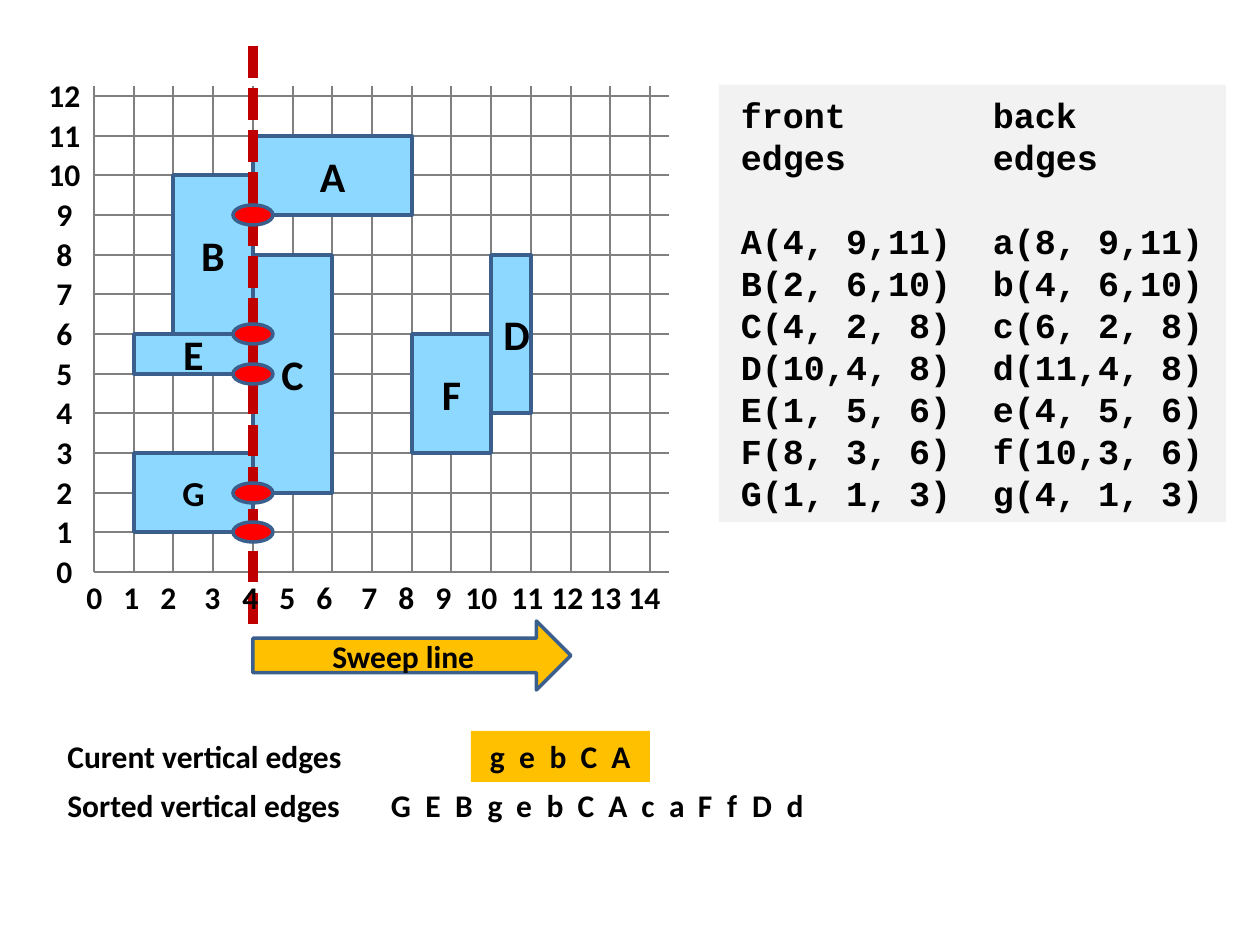
import pptx
import pptx.util
from pptx.dml.color import RGBColor
from pptx.enum.dml import MSO_LINE
from pptx.enum.shapes import MSO_CONNECTOR, MSO_SHAPE
from pptx.enum.text import MSO_ANCHOR, PP_ALIGN
from lxml import etree

PX = 914400 // 126
BLACK = RGBColor(0x00, 0x00, 0x00)
GRID_GRAY = RGBColor(0x80, 0x80, 0x80)
PANEL_GRAY = RGBColor(0xF2, 0xF2, 0xF2)
SKY = RGBColor(0x8C, 0xD8, 0xFE)
BLUE = RGBColor(0x3A, 0x5F, 0x8C)
RED = RGBColor(0xFF, 0x00, 0x00)
DARK_RED = RGBColor(0xC0, 0x00, 0x00)
AMBER = RGBColor(0xFF, 0xC0, 0x00)

COLUMNS, ROWS = 14, 12
column_x = [94 + round(i * 556 / COLUMNS) for i in range(COLUMNS + 1)]
row_y = [572 - round(i * 476 / ROWS) for i in range(ROWS + 1)]
GRID_TOP, GRID_RIGHT = 86, 669
SWEEP = 4

# name: (front x, back x, low y, high y)
boxes = {
    "G": (1, 4, 1, 3),
    "E": (1, 4, 5, 6),
    "B": (2, 4, 6, 10),
    "A": (4, 8, 9, 11),
    "C": (4, 6, 2, 8),
    "F": (8, 10, 3, 6),
    "D": (10, 11, 4, 8),
}

presentation = pptx.Presentation()
presentation.slide_width = 1260 * PX
presentation.slide_height = 945 * PX
slide = presentation.slides.add_slide(presentation.slide_layouts[6])


def add_box(kind, left, top, width, height, fill=None, outline=None):
    """Adds a preset shape, or a text box when kind is None."""
    place = [value * PX for value in (left, top, width, height)]
    if kind is None:
        shape = slide.shapes.add_textbox(*place)
    else:
        shape = slide.shapes.add_shape(kind, *place)
        shape.shadow.inherit = False
        shape.fill.solid()
        shape.fill.fore_color.rgb = fill
        if outline is None:
            shape.line.fill.background()
        else:
            shape.line.color.rgb = outline
            shape.line.width = pptx.util.Pt(2)
    shape.text_frame.word_wrap = True
    return shape


def write(shape, text, size=18, font="Calibri", align=PP_ALIGN.LEFT,
          anchor=MSO_ANCHOR.TOP, inset=None, stops=(), stop_kind="ctr"):
    """Sets bold text; inset is (side, end) and stops are tab stops, in px."""
    frame = shape.text_frame
    frame.text = text
    frame.vertical_anchor = anchor
    if inset:
        frame.margin_left = frame.margin_right = inset[0] * PX
        frame.margin_top = frame.margin_bottom = inset[1] * PX
    for paragraph in frame.paragraphs:
        paragraph.alignment = align
        if stops:
            properties = paragraph._p.get_or_add_pPr()
            tabs = etree.SubElement(properties, pptx.oxml.ns.qn("a:tabLst"))
            for stop in stops:
                etree.SubElement(tabs, pptx.oxml.ns.qn("a:tab"),
                                 pos=str(stop * PX), algn=stop_kind)
        for run in paragraph.runs:
            run.font.size = pptx.util.Pt(size)
            run.font.name = font
            run.font.bold = True
            run.font.color.rgb = BLACK


# Grid lines, then the boxes, then the sweep line over them
grid_lines = [(x, GRID_TOP, x, row_y[0]) for x in column_x]
grid_lines += [(GRID_RIGHT, y, column_x[0], y) for y in row_y]
sweep_line = (column_x[SWEEP], 46, column_x[SWEEP], 631)

for ends in grid_lines + [sweep_line]:
    if ends == sweep_line:
        for name, (front, back, low, high) in boxes.items():
            box = add_box(MSO_SHAPE.RECTANGLE, column_x[front], row_y[high],
                          column_x[back] - column_x[front],
                          row_y[low] - row_y[high], SKY, BLUE)
            write(box, name, 20 if name == "G" else 24,
                  align=PP_ALIGN.CENTER, anchor=MSO_ANCHOR.MIDDLE)
    line = slide.shapes.add_connector(MSO_CONNECTOR.STRAIGHT,
                                      *[value * PX for value in ends])
    etree.SubElement(line._element.spPr, pptx.oxml.ns.qn("a:effectLst"))
    line.line.color.rgb = GRID_GRAY
    line.line.width = pptx.util.Pt(1.5)
line.line.color.rgb = DARK_RED
line.line.width = pptx.util.Pt(6)
line.line.dash_style = MSO_LINE.SQUARE_DOT

# Crossings on the sweep line
for row in (2, 1, 5, 6, 9):
    add_box(MSO_SHAPE.OVAL, column_x[SWEEP] - 20, row_y[row] - 10, 40, 20, RED, BLUE)

arrow = add_box(MSO_SHAPE.RIGHT_ARROW, column_x[SWEEP], 621, 318, 69, AMBER, BLUE)
write(arrow, "Sweep line", align=PP_ALIGN.CENTER, anchor=MSO_ANCHOR.MIDDLE)

# Axis labels
X_LABEL_STOPS = (45, 82, 126, 164, 201, 238, 283, 320, 357, 395, 441, 481, 519, 558)
x_axis = add_box(None, 74, 572, 665, 51)
write(x_axis, "\t".join(str(i) for i in range(COLUMNS + 1)), stops=X_LABEL_STOPS)
for row in range(ROWS, -1, -1):
    label = add_box(None, 45, row_y[row] - 20, 39, 38)
    write(label, str(row), align=PP_ALIGN.CENTER, anchor=MSO_ANCHOR.MIDDLE, inset=(0, 0))

# Edge sequences: the current edges are the fourth to eighth of the sorted ones
SORTED_EDGES = "GEBgebCAcaFfDd"
EDGE_CENTERS = (10, 42, 73, 104, 133, 164, 195, 227, 257, 286, 314, 341, 371, 404)
current_edges = add_box(MSO_SHAPE.RECTANGLE, 471, 731, 179, 51, AMBER)
write(current_edges, "\t".join(SORTED_EDGES[3:8]), inset=(19, 6),
      stops=[center - EDGE_CENTERS[3] + 8 for center in EDGE_CENTERS[4:8]])
sorted_edges = add_box(None, 372, 780, 476, 51)
write(sorted_edges, "\t".join(SORTED_EDGES), inset=(19, 6), stops=EDGE_CENTERS[1:])
for top, caption in ((780, "Sorted vertical edges"), (731, "Curent vertical edges")):
    write(add_box(None, 55, top, 317, 51), caption)

# Front and back edges of every box
listing = ["front\tback", "edges\tedges"]
for name, (front, back, low, high) in sorted(boxes.items()):
    span = f"{low},{high:>2})"
    front_edge = f"{name}(" + f"{front},".ljust(3) + span
    back_edge = f"{name.lower()}(" + f"{back},".ljust(3) + span
    listing.append(f"{front_edge}\t{back_edge}")
panel = add_box(MSO_SHAPE.RECTANGLE, 719, 85, 507, 437, PANEL_GRAY)
write(panel, "\n".join(listing), 20, "Courier New", anchor=MSO_ANCHOR.MIDDLE,
      inset=(22, 6), stops=[252], stop_kind="l")
for paragraph in panel.text_frame.paragraphs:
    paragraph.line_spacing = pptx.util.Pt(24)
panel.text_frame.paragraphs[2].space_before = pptx.util.Pt(24)

presentation.save("out.pptx")
